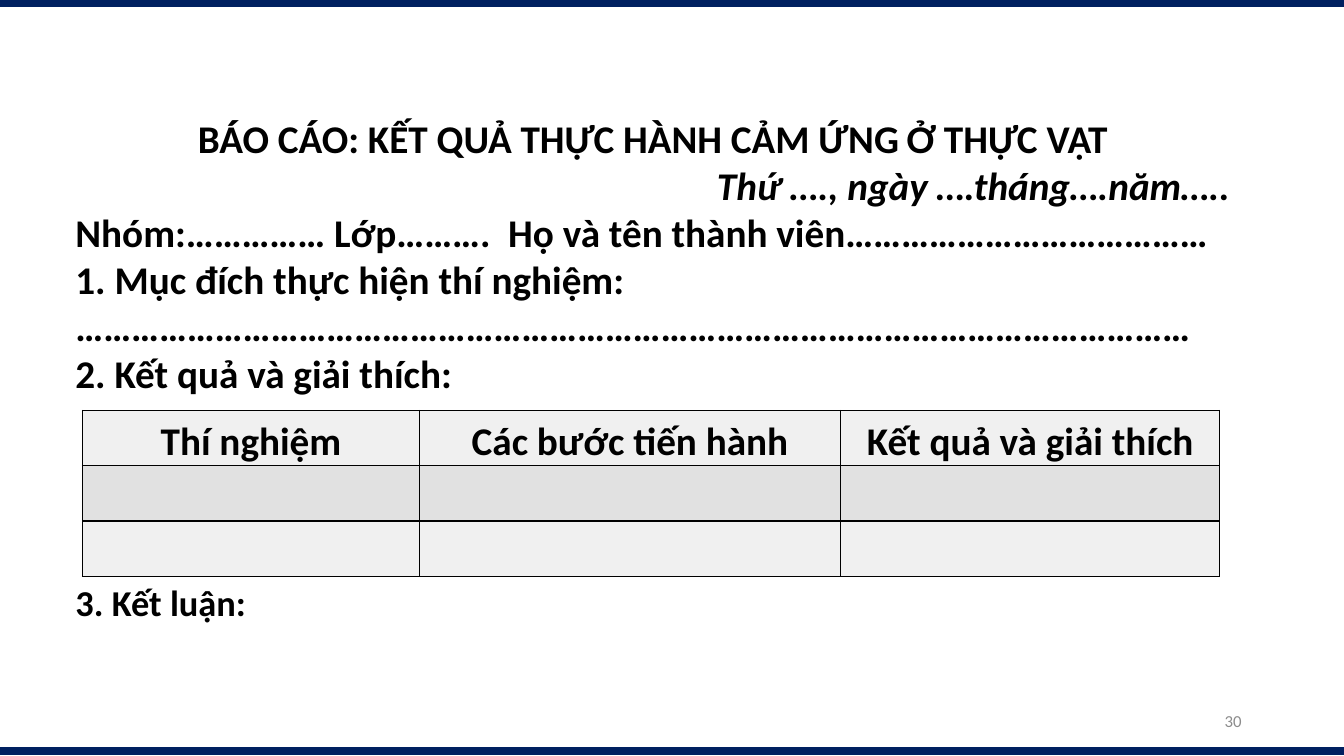
import pptx
import pptx.dml.color
import pptx.enum.shapes
import pptx.enum.text
import pptx.oxml
import pptx.oxml.ns
import pptx.util
from lxml import etree

Pt = pptx.util.Pt
RGBColor = pptx.dml.color.RGBColor
ALIGN = pptx.enum.text.PP_ALIGN
ANCHOR = pptx.enum.text.MSO_ANCHOR
AUTO_SIZE = pptx.enum.text.MSO_AUTO_SIZE
qn = pptx.oxml.ns.qn

NAVY = RGBColor(0x00, 0x20, 0x60)
BLACK = RGBColor(0x00, 0x00, 0x00)
GREY = RGBColor(0x8C, 0x8C, 0x8C)
LIGHT_BAND = RGBColor(0xF0, 0xF0, 0xF0)
DARK_BAND = RGBColor(0xE1, 0xE1, 0xE1)

SLIDE_WIDTH, SLIDE_HEIGHT = 960, 540
TEXT_LEFT, TEXT_WIDTH = 46.8, 838.8


class ReportSlide:
    """Holds the text style and the slide being filled."""

    font_name = "Calibri"
    body_size = 28

    def __init__(self, deck):
        self.slide = deck.slides.add_slide(deck.slide_layouts[5])

    def format_para(self, para, align, size=None, color=BLACK, bold=True, italic=False):
        para.alignment = align
        for span in para.runs:
            span.font.name = self.font_name
            span.font.size = Pt(size or self.body_size)
            span.font.color.rgb = color
            span.font.bold = bold
            span.font.italic = italic

    def title(self, text, left, top, width, height):
        box = self.slide.shapes.title
        box.left, box.top, box.width, box.height = map(Pt, (left, top, width, height))
        frame = box.text_frame
        frame.text = text
        frame.word_wrap = True
        frame.auto_size = AUTO_SIZE.NONE
        frame.vertical_anchor = ANCHOR.TOP
        self.format_para(frame.paragraphs[0], ALIGN.CENTER)

    def text(self, lines, left, top, width, height, anchor=ANCHOR.TOP, wrap=True):
        """Each line is its text, alignment and a dict of style changes."""
        box = self.slide.shapes.add_textbox(*map(Pt, (left, top, width, height)))
        frame = box.text_frame
        frame.word_wrap = wrap
        frame.vertical_anchor = anchor
        frame.text = "\n".join(line[0] for line in lines)
        for para, (_, align, style) in zip(frame.paragraphs, lines):
            self.format_para(para, align, **style)

    def rule(self, y):
        line = self.slide.shapes.add_connector(
            pptx.enum.shapes.MSO_CONNECTOR.STRAIGHT, Pt(0), Pt(y), Pt(SLIDE_WIDTH), Pt(y))
        line.line.color.rgb = NAVY
        line.line.width = Pt(6)
        properties = line._element.find(qn("p:spPr"))
        etree.SubElement(properties, qn("a:effectLst"))

    def border(self, cell):
        properties = cell._tc.get_or_add_tcPr()
        for index, side in enumerate(("lnL", "lnR", "lnT", "lnB")):
            edge = etree.Element(qn("a:" + side), w=str(Pt(1)))
            fill = etree.SubElement(edge, qn("a:solidFill"))
            etree.SubElement(fill, qn("a:srgbClr"), val=str(BLACK))
            properties.insert(index, edge)

    def table(self, headings, bands, left, top, widths, row_height):
        frame = self.slide.shapes.add_table(
            len(bands), len(widths), Pt(left), Pt(top),
            Pt(sum(widths)), Pt(row_height * len(bands)))
        table = frame.table
        table.first_row = table.horz_banding = False
        for column, width in zip(table.columns, widths):
            column.width = Pt(width)
        for row, band in zip(table.rows, bands):
            row.height = Pt(row_height)
            for cell in row.cells:
                cell.fill.solid()
                cell.fill.fore_color.rgb = band
                cell.vertical_anchor = ANCHOR.MIDDLE
                cell.margin_left = cell.margin_right = Pt(5)
                cell.margin_top = cell.margin_bottom = Pt(0)
                self.border(cell)
        for cell, heading in zip(table.rows[0].cells, headings):
            cell.text = heading
            para = cell.text_frame.paragraphs[0]
            para.line_spacing = 1.15
            para.space_before = Pt(5)
            self.format_para(para, ALIGN.CENTER)


def main():
    deck = pptx.Presentation()
    deck.slide_width, deck.slide_height = Pt(SLIDE_WIDTH), Pt(SLIDE_HEIGHT)
    report = ReportSlide(deck)

    # Rules along the top and bottom edges
    for y in (2.2, 536.4):
        report.rule(y)

    # Results table
    report.table(
        ("Thí nghiệm", "Các bước tiến hành", "Kết quả và giải thích"),
        (LIGHT_BAND, DARK_BAND, LIGHT_BAND),
        59, 293.2, (240.5, 301, 270.8), 39.5)

    # Heading and form lines
    report.title("BÁO CÁO: KẾT QUẢ THỰC HÀNH CẢM ỨNG Ở THỰC VẬT",
                 TEXT_LEFT, 77.8, TEXT_WIDTH, 41)
    report.text([
        ("Thứ …., ngày ….tháng….năm…..", ALIGN.RIGHT, {"italic": True}),
        ("Nhóm:…………… Lớp……….  Họ và tên thành viên…………………………………", ALIGN.JUSTIFY, {}),
        ("1. Mục đích thực hiện thí nghiệm:", ALIGN.JUSTIFY, {}),
        ("…" * 40, ALIGN.JUSTIFY, {}),
        ("2. Kết quả và giải thích:", ALIGN.JUSTIFY, {}),
    ], TEXT_LEFT, 111.6, TEXT_WIDTH, 177)

    # Conclusion and page number
    report.text([("3. Kết luận:", ALIGN.JUSTIFY, {"size": 26})],
                TEXT_LEFT, 411, 137.5, 39, wrap=False)
    report.text([("30", ALIGN.RIGHT, {"size": 12, "color": GREY, "bold": False})],
                678, 500.5, 216, 28.8, anchor=ANCHOR.MIDDLE)

    deck.save("out.pptx")


if __name__ == "__main__":
    main()
